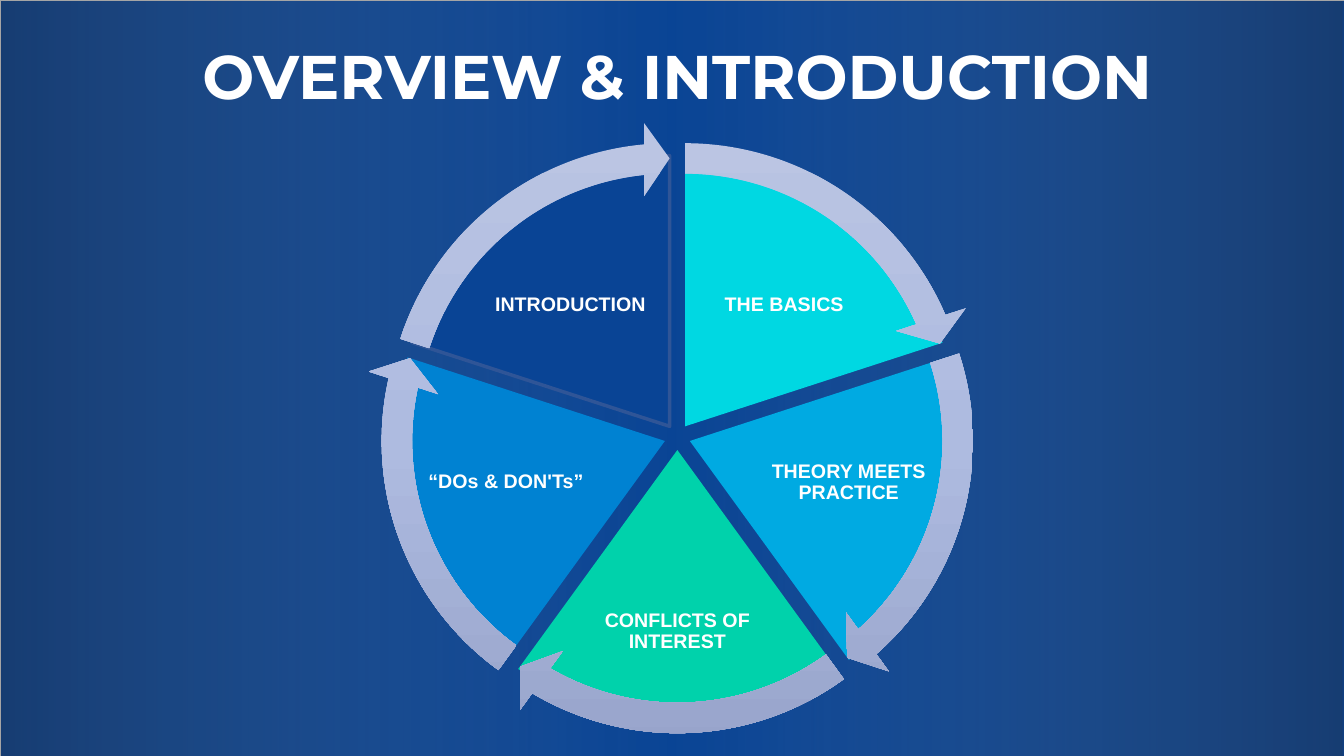
import math

import pptx
import pptx.dml.color
import pptx.enum.shapes
import pptx.enum.text
import pptx.oxml
import pptx.oxml.ns
import pptx.util

Inches, Pt = pptx.util.Inches, pptx.util.Pt
SHAPE = pptx.enum.shapes.MSO_SHAPE
ALIGN = pptx.enum.text.PP_ALIGN
MIDDLE = pptx.enum.text.MSO_ANCHOR.MIDDLE
WIDTH, HEIGHT = 13.33, 7.5


def color(hex_code):
    return pptx.dml.color.RGBColor.from_string(hex_code)


def set_gradient(shape, stops, angle):
    """Fill a shape with (position %, colour, opacity %) stops."""
    stop_xml = "".join(
        f'<a:gs pos="{position * 1000}"><a:srgbClr val="{hex_code}">'
        f'<a:alpha val="{opacity * 1000}"/></a:srgbClr></a:gs>'
        for position, hex_code, opacity in stops)
    gradient = pptx.oxml.parse_xml(
        f'<a:gradFill {pptx.oxml.ns.nsdecls("a")} rotWithShape="1">'
        f'<a:gsLst>{stop_xml}</a:gsLst>'
        f'<a:lin ang="{angle * 60000}" scaled="0"/></a:gradFill>')
    shape.fill.background()
    no_fill = shape._element.spPr.find(pptx.oxml.ns.qn("a:noFill"))
    shape._element.spPr.replace(no_fill, gradient)


deck = pptx.Presentation()
deck.slide_width, deck.slide_height = Inches(WIDTH), Inches(HEIGHT)
slide = deck.slides.add_slide(deck.slide_layouts[5])
shapes = slide.shapes

# Background with darkened left and right edges
slide.background.fill.solid()
slide.background.fill.fore_color.rgb = color("094495")
vignette = shapes.add_shape(SHAPE.RECTANGLE, 0, 0, deck.slide_width, deck.slide_height)
vignette.shadow.inherit = False
set_gradient(vignette, [(0, "312F2F", 34), (50, "A5A5A5", 0), (100, "312F2F", 34)], 0)
vignette.line.color.rgb = color("A5A5A5")
vignette.line.width = Pt(0.5)
shapes._spTree.insert(2, vignette._element)  # behind the title

# Title
title = shapes.title
title.left, title.top = Inches(0.97), Inches(0.06)
title.width, title.height = Inches(11.5), Inches(1.45)
title.text_frame.text = "OVERVIEW & INTRODUCTION"
title.text_frame.auto_size = pptx.enum.text.MSO_AUTO_SIZE.NONE
title.text_frame.vertical_anchor = MIDDLE
heading = title.text_frame.paragraphs[0]
heading.alignment = ALIGN.CENTER
heading.line_spacing = 0.9
heading.font.name, heading.font.size, heading.font.bold = "Montserrat", Pt(44), True
heading.font.color.rgb = color("FFFFFF")

# Cycle: topic, colour, label centre from the hub, label size
topics = [
    ("THE BASICS", "00D8E2", (1.06, -1.31), (1.73, 1.15)),
    ("THEORY MEETS PRACTICE", "00AAE2", (1.7, 0.45), (1.6, 1.28)),
    ("CONFLICTS OF INTEREST", "00D2AB", (0, 1.93), (1.54, 1.41)),
    ("“DOs & DON'Ts”", "0082D2", (-1.7, 0.45), (1.6, 1.28)),
    ("INTRODUCTION", "094495", (-1.06, -1.31), (1.73, 1.15)),
]
HUB_X, HUB_Y = WIDTH * 0.504, HEIGHT * 0.578
PIE, RING, GAP = 5.37, 6.04, 0.13  # diameters, and shift of each slice outwards
SWEEP = 360 / len(topics)
UNIT = 0.6  # one degree in adjustment units
HEAD = 3.28  # angle of an arrowhead in adjustment units

rings = []
for index, (topic, slice_color, (label_x, label_y), (label_w, label_h)) in enumerate(topics):
    start = (270 + index * SWEEP) % 360
    end = (start + SWEEP) % 360
    middle = math.radians(start + SWEEP / 2)
    center_x = HUB_X + GAP * math.cos(middle)
    center_y = HUB_Y + GAP * math.sin(middle)
    rings.append((center_x, center_y, start, end))

    # Slice
    wedge = shapes.add_shape(SHAPE.PIE, Inches(center_x - PIE / 2),
                             Inches(center_y - PIE / 2), Inches(PIE), Inches(PIE))
    wedge.adjustments[0], wedge.adjustments[1] = start * UNIT, end * UNIT
    wedge.shadow.inherit = False
    wedge.fill.solid()
    wedge.fill.fore_color.rgb = color(slice_color)
    if topic == "INTRODUCTION":
        wedge.line.color.rgb = color("2F5597")
        wedge.line.width = Pt(2.5)
    else:
        wedge.line.fill.background()

    # Label
    label = shapes.add_textbox(Inches(HUB_X + label_x - label_w / 2),
                               Inches(HUB_Y + label_y - label_h / 2),
                               Inches(label_w), Inches(label_h)).text_frame
    label.word_wrap = True
    label.vertical_anchor = MIDDLE
    label.margin_left = label.margin_right = Inches(0.02)
    label.margin_top = label.margin_bottom = Inches(0.02)
    label.text = topic
    caption = label.paragraphs[0]
    caption.alignment = ALIGN.CENTER
    caption.line_spacing = 0.9
    caption.font.name, caption.font.size, caption.font.bold = "Arial", Pt(14), True
    caption.font.color.rgb = color("FFFFFF")

# Arrows around the slices
for center_x, center_y, start, end in rings:
    arrow = shapes.add_shape(SHAPE.CIRCULAR_ARROW, Inches(center_x - RING / 2),
                             Inches(center_y - RING / 2), Inches(RING), Inches(RING))
    for number, value in enumerate([0.05, HEAD, end * UNIT - HEAD, start * UNIT, 0.06]):
        arrow.adjustments[number] = value
    arrow.shadow.inherit = False
    set_gradient(arrow, [(0, "BBC5E3", 100), (50, "AEBBE0", 100), (100, "98A4CB", 100)], 90)
    arrow.line.fill.background()

deck.save("out.pptx")
